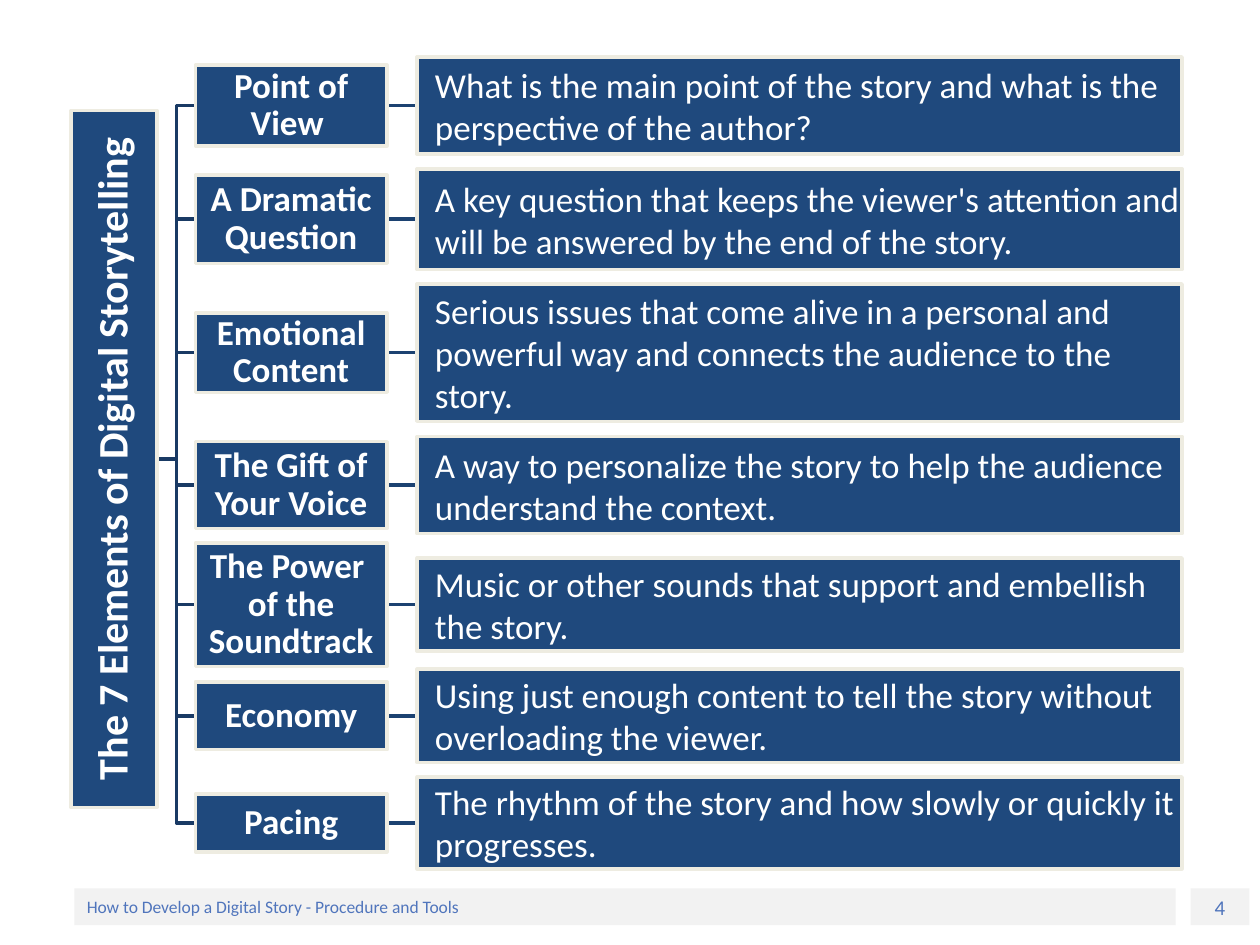
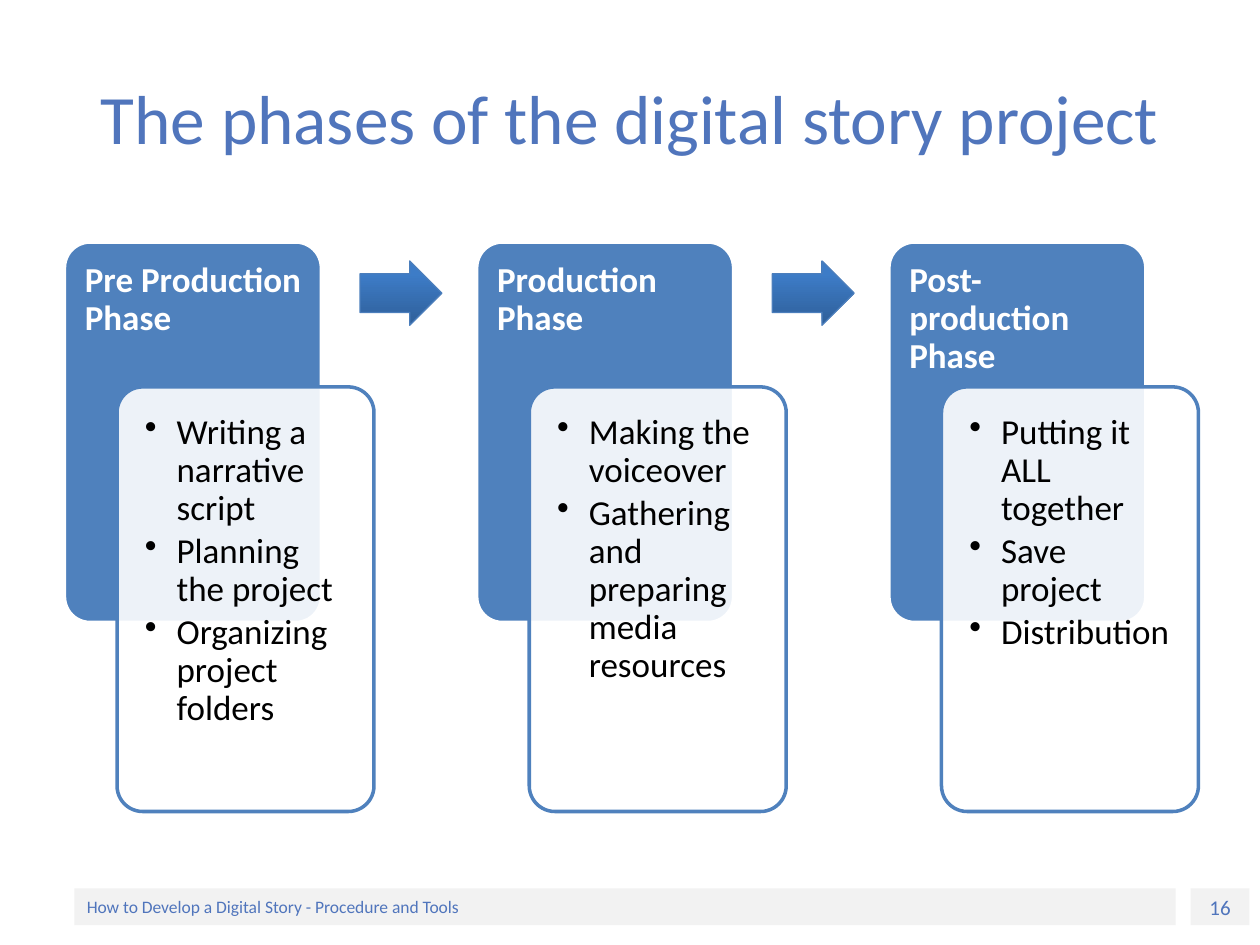
from lxml import etree
from pptx import Presentation
from pptx.dml.color import RGBColor
from pptx.enum.shapes import MSO_CONNECTOR as Connector, MSO_SHAPE as Shape
from pptx.enum.text import MSO_ANCHOR as Anchor, PP_ALIGN as Align
from pptx.oxml.ns import qn
from pptx.util import Cm, Pt

FONT = "Calibri"
WHITE, BLACK, CREAM, BAND = "FFFFFF", "000000", "EEECE1", "F2F2F2"
ACCENT, NAVY, BLUE = "5075BC", "1F497D", "4F81BD"
TRUNK_LINE, DETAIL_LINE, ARROW_LINE = "193A64", "1C4271", "4B7EBC"
ARROW_DARK, ARROW_LIGHT = "2F5F99", "3D7CC7"
FOOTER = "How to Develop a Digital Story - Procedure and Tools"

# Label, label height, detail, detail height, centre of the row (cm)
ELEMENTS = [
    ("Point of View ", 1.63,
     "What is the main point of the story and what is the perspective of the author?", 1.96, 2.13),
    ("A Dramatic Question", 1.78,
     "A key question that keeps the viewer's attention and will be answered by the end of the story.",
     2.03, 4.42),
    ("Emotional Content", 1.6,
     "Serious issues that come alive in a personal and powerful way and connects the audience "
     "to the story.", 2.77, 7.11),
    ("The Gift of Your Voice", 1.75,
     "A way to personalize the story to help the audience understand the context.", 1.96, 9.78),
    ("The Power \nof the Soundtrack", 2.49,
     "Music or other sounds that support and embellish the story.", 1.88, 12.19),
    ("Economy", 1.37,
     "Using just enough content to tell the story without overloading the viewer.", 1.88, 14.43),
    ("Pacing", 1.17,
     "The rhythm of the story and how slowly or quickly it progresses.", 1.85, 16.59),
]

PHASES = [
    ("Pre Production Phase",
     ["Writing a narrative script", "Planning the project", "Organizing project folders"]),
    ("Production Phase",
     ["Making the voiceover", "Gathering and preparing media resources"]),
    ("Post-production Phase",
     ["Putting it ALL together", "Save project", "Distribution"]),
]


def color(value):
    return RGBColor.from_string(value)


class Painter:
    """Holds the deck style and the slide being drawn."""

    def __init__(self, deck):
        self.deck = deck
        self.page = None

    def new_page(self, number):
        self.page = self.deck.slides.add_slide(self.deck.slide_layouts[6])
        for left, width, text, size, align in [(24, 1.19, str(number), 12, Align.CENTER),
                                               (1.5, 22.2, FOOTER, 10, Align.LEFT)]:
            band = self.box(left, 17.91, width, 0.74, BAND)
            self.put_text(band, [text], size, ACCENT, align)

    def title(self, text):
        box = self.page.shapes.add_textbox(Cm(1.27), Cm(0.76), Cm(22.86), Cm(3.18))
        self.put_text(box, [text], 39.6, ACCENT, Align.CENTER)

    def box(self, left, top, width, height, fill=None, line=None, weight=2,
            kind=Shape.RECTANGLE, adjust=()):
        box = self.page.shapes.add_shape(kind, Cm(left), Cm(top), Cm(width), Cm(height))
        box.shadow.inherit = False
        for index, value in enumerate(adjust):
            box.adjustments[index] = value
        if fill:
            box.fill.solid()
            box.fill.fore_color.rgb = color(fill)
        if line:
            self.outline(box, line, weight)
        else:
            box.line.fill.background()
        return box

    def round_box(self, left, top, width, height, fill, line):
        return self.box(left, top, width, height, fill, line,
                        kind=Shape.ROUNDED_RECTANGLE, adjust=(0.1,))

    def outline(self, item, line, weight=2):
        item.line.color.rgb = color(line)
        item.line.width = Pt(weight)

    def put_text(self, box, texts, size, ink, align=Align.LEFT, bold=False,
                 anchor=Anchor.MIDDLE, insets=(0.25, 0.13, 0.25, 0.13), spacing=1.0,
                 bullets=False):
        frame = box.text_frame
        frame.word_wrap = True
        frame.vertical_anchor = anchor
        (frame.margin_left, frame.margin_top,
         frame.margin_right, frame.margin_bottom) = map(Cm, insets)
        for index, text in enumerate(texts):
            para = frame.add_paragraph() if index else frame.paragraphs[0]
            para.text = text
            para.alignment = align
            para.line_spacing = spacing
            para.font.name = FONT
            para.font.size = Pt(size)
            para.font.bold = bold
            para.font.color.rgb = color(ink)
            if bullets:
                self.bullet(para)

    def bullet(self, para):
        para.space_after = Pt(3)
        settings = para._p.get_or_add_pPr()
        settings.set("marL", str(Cm(0.64)))
        settings.set("indent", str(-Cm(0.64)))
        mark = etree.Element(qn("a:buChar"), char="•")
        settings.find(qn("a:defRPr")).addprevious(mark)

    def fade(self, box, opacity):
        tint = box.element.spPr.find(qn("a:solidFill")).find(qn("a:srgbClr"))
        etree.SubElement(tint, qn("a:alpha"), val=str(opacity * 1000))

    def straight(self, x1, y1, x2, y2, line):
        link = self.page.shapes.add_connector(Connector.STRAIGHT, Cm(x1), Cm(y1), Cm(x2), Cm(y2))
        self.outline(link, line)
        etree.SubElement(link.element.spPr, qn("a:effectLst"))

    def polyline(self, points, line):
        start, *rest = [(Cm(x), Cm(y)) for x, y in points]
        builder = self.page.shapes.build_freeform(*start, scale=1.0)
        builder.add_line_segments(rest, close=False)
        branch = builder.convert_to_shape()
        branch.fill.background()
        branch.shadow.inherit = False
        self.outline(branch, line)

    def arrow(self, left, top, width, height):
        arrow = self.box(left, top, width, height, None, ARROW_LINE, 0.75,
                         Shape.RIGHT_ARROW, (0.6, 0.5))
        arrow.fill.gradient()
        arrow.fill.gradient_angle = 90
        for stop, tint, position in zip(arrow.fill.gradient_stops,
                                        (ARROW_DARK, ARROW_LIGHT), (0, 0.8)):
            stop.color.rgb = color(tint)
            stop.position = position


def draw_elements(painter):
    painter.new_page(4)
    root_x, root_y, root_length, root_depth = 2.3, 9.25, 14.05, 1.73
    root_right, trunk = 3.18, 3.56
    label_left, label_width = 3.94, 3.86
    detail_left, detail_width = 8.41, 15.42
    tight = (0.03, 0.03, 0.03, 0.03)

    # Branches
    for *_, middle in reversed(ELEMENTS):
        painter.straight(label_left + label_width, middle, detail_left, middle, DETAIL_LINE)
        painter.polyline([(root_right, root_y), (trunk, root_y),
                          (trunk, middle), (label_left, middle)], TRUNK_LINE)

    # Root, turned to read upwards
    root = painter.box(root_x - root_length / 2, root_y - root_depth / 2,
                       root_length, root_depth, NAVY, CREAM)
    root.rotation = 270
    painter.put_text(root, ["The 7 Elements of Digital Storytelling"], 24, WHITE, Align.CENTER,
                     True, insets=tight, spacing=0.9)

    # Labels and details
    for label, label_height, detail, detail_height, middle in ELEMENTS:
        box = painter.box(label_left, middle - label_height / 2, label_width, label_height,
                          NAVY, CREAM)
        painter.put_text(box, [label], 20, WHITE, Align.CENTER, True, insets=tight, spacing=0.9)
        box = painter.box(detail_left, middle - detail_height / 2, detail_width, detail_height,
                          NAVY, CREAM)
        painter.put_text(box, [detail], 20, WHITE, insets=(0.36, 0.03, 0.03, 0.03))


def draw_phases(painter):
    painter.new_page(16)
    painter.title("The phases of the digital story project")
    width, step = 5.18, 8.31
    for index, (phase, tasks) in enumerate(PHASES):
        left = 1.3 + index * step
        card = painter.round_box(left, 4.88, width, 7.67, BLUE, WHITE)
        painter.put_text(card, [phase], 20, WHITE, bold=True, anchor=Anchor.TOP,
                         insets=(0.26, 0.26, 0.2, 0.2), spacing=0.9)
        panel = painter.round_box(left + 1.06, 7.8, width, 8.56, WHITE, BLUE)
        painter.fade(panel, 90)
        painter.put_text(panel, tasks, 20, BLACK, anchor=Anchor.TOP,
                         insets=(0.41, 0.41, 0.41, 0.41), spacing=0.9, bullets=True)
        if index < len(PHASES) - 1:
            painter.arrow(left + 5.96, 5.26, 1.65, 1.3)


def main():
    deck = Presentation()
    deck.slide_width, deck.slide_height = Cm(25.4), Cm(19.05)
    painter = Painter(deck)
    draw_elements(painter)
    draw_phases(painter)
    deck.save("out.pptx")


if __name__ == "__main__":
    main()
